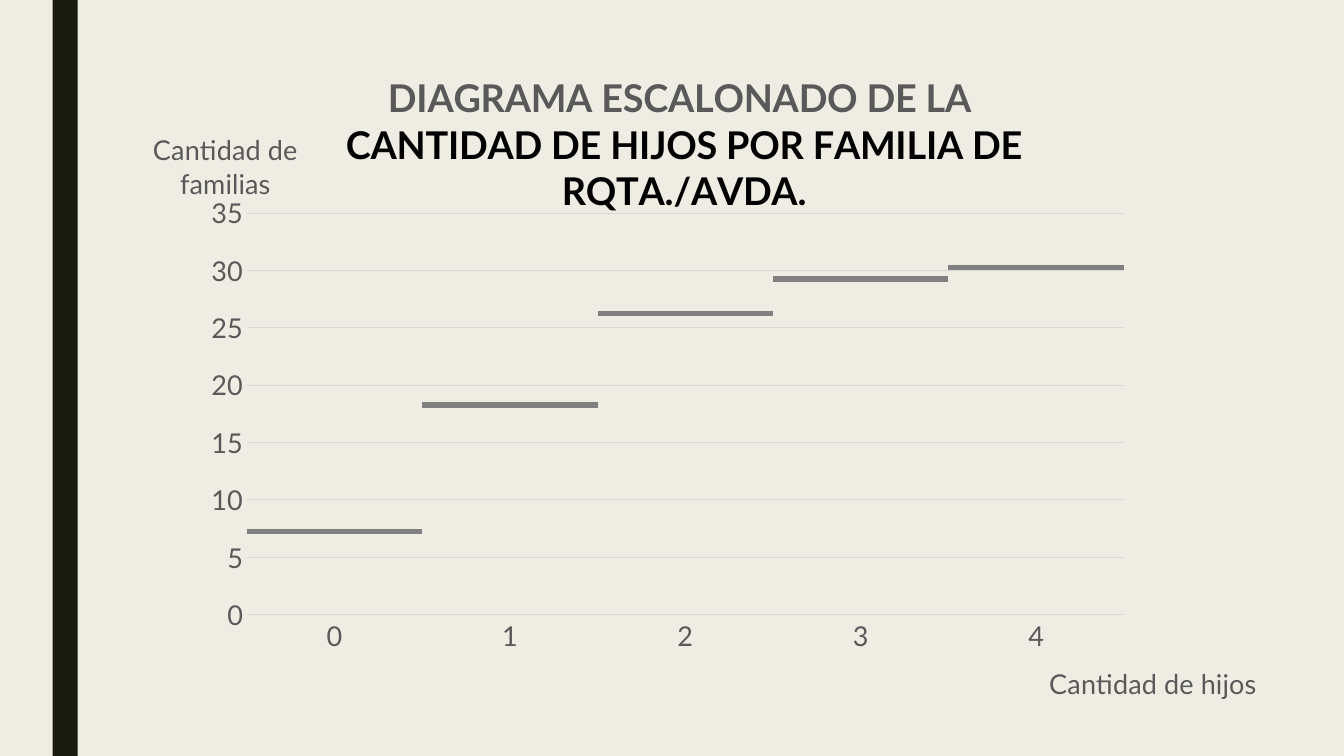
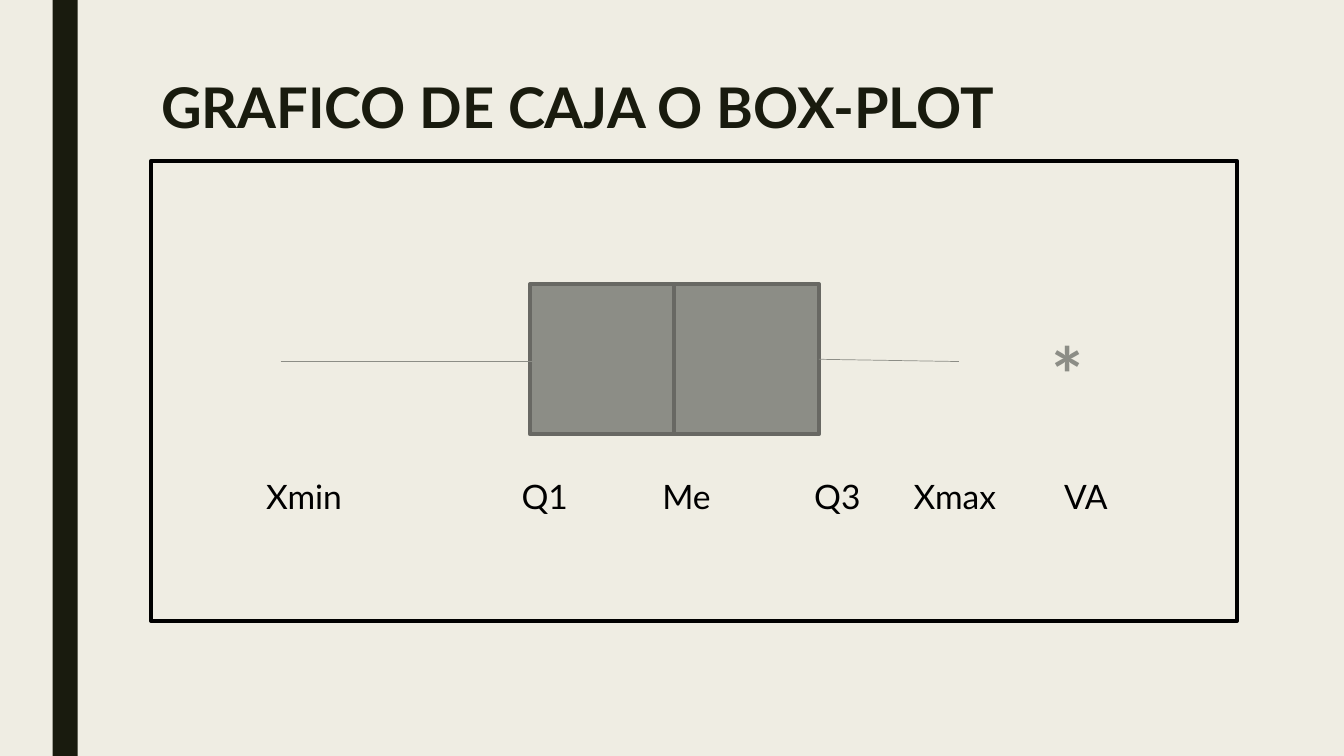
from dataclasses import dataclass

import lxml.etree
import pptx
import pptx.chart.data
import pptx.dml.color
import pptx.enum.chart
import pptx.enum.shapes
import pptx.enum.text
import pptx.oxml.ns
import pptx.util

Pt = pptx.util.Pt
qn = pptx.oxml.ns.qn


@dataclass(frozen=True)
class Theme:
    font: str = "Lato"
    background: str = "EFEDE3"
    dark: str = "191B0E"
    black: str = "000000"
    axis_text: str = "595959"
    grid: str = "D9D9D9"
    step: str = "808080"
    plot_box: str = "8C8D86"
    plot_edge: str = "686863"
    title_size: float = 40
    chart_title_size: float = 28
    axis_size: float = 20
    label_size: float = 24
    outlier_size: float = 54
    edge_width: float = 2.75
    whisker_width: float = 0.5
    grid_width: float = 0.75


THEME = Theme()
SLIDE_WIDTH, SLIDE_HEIGHT = 960, 540


def rgb(color):
    return pptx.dml.color.RGBColor.from_string(color)


def style_font(font, size, color, bold=False):
    font.name = THEME.font
    font.size = Pt(size)
    font.color.rgb = rgb(color)
    font.bold = bold


def style_line(line, color, width):
    line.color.rgb = rgb(color)
    line.width = Pt(width)


def add_box(shapes, box, fill=None, edge=None):
    rectangle = shapes.add_shape(
        pptx.enum.shapes.MSO_SHAPE.RECTANGLE, *map(Pt, box))
    rectangle.shadow.inherit = False
    if fill:
        rectangle.fill.solid()
        rectangle.fill.fore_color.rgb = rgb(fill)
    else:
        rectangle.fill.background()
    if edge:
        style_line(rectangle.line, edge, THEME.edge_width)
    else:
        rectangle.line.fill.background()
    return rectangle


def add_text(slide, box, text, size, color, bold=False):
    frame = slide.shapes.add_textbox(*map(Pt, box)).text_frame
    frame.word_wrap = True
    frame.vertical_anchor = pptx.enum.text.MSO_ANCHOR.TOP
    paragraph = frame.paragraphs[0]
    paragraph.text = text
    style_font(paragraph.font, size, color, bold)
    return paragraph


def add_whisker(slide, start, end):
    whisker = slide.shapes.add_connector(
        pptx.enum.shapes.MSO_CONNECTOR.STRAIGHT, *map(Pt, start + end))
    style_line(whisker.line, THEME.plot_box, THEME.whisker_width)
    lxml.etree.SubElement(whisker.element.spPr, qn("a:effectLst"))
    return whisker


def set_layout(parent, **percents):
    layout = parent.find(qn("c:layout"))
    if layout is None:
        layout = lxml.etree.Element(qn("c:layout"))
        parent.insert(1 if parent.find(qn("c:tx")) is not None else 0, layout)
    manual = lxml.etree.SubElement(layout, qn("c:manualLayout"))
    if "w" in percents:
        lxml.etree.SubElement(manual, qn("c:layoutTarget")).set("val", "inner")
    for side in ("x", "y"):
        lxml.etree.SubElement(manual, qn(f"c:{side}Mode")).set("val", "edge")
    for name, percent in percents.items():
        lxml.etree.SubElement(manual, qn(f"c:{name}")).set(
            "val", f"{percent / 100:.4f}")


def style_axis(axis, title, x, y):
    axis.major_tick_mark = pptx.enum.chart.XL_TICK_MARK.NONE
    axis.minor_tick_mark = pptx.enum.chart.XL_TICK_MARK.NONE
    style_font(axis.tick_labels.font, THEME.axis_size, THEME.axis_text)
    frame = axis.axis_title.text_frame
    frame.text = title
    style_font(frame.paragraphs[0].font, THEME.axis_size, THEME.axis_text)
    properties = frame._txBody.find(qn("a:bodyPr"))
    properties.set("rot", "0")
    properties.set("vert", "horz")
    set_layout(axis.axis_title.element, x=x, y=y)


def add_step_chart(slide, box):
    families = pptx.chart.data.CategoryChartData()
    families.categories = ["0", "1", "2", "3", "4"]
    families.add_series("Series 1", (7, 18, 26, 29, 30))
    families.add_series("Series 2", (0.5,) * 5)
    chart = slide.shapes.add_chart(
        pptx.enum.chart.XL_CHART_TYPE.COLUMN_STACKED,
        *map(Pt, box), families).chart
    chart.has_legend = False
    style_font(chart.font, THEME.axis_size, THEME.axis_text)

    chart.has_title = True
    heading = chart.chart_title.text_frame
    heading.text = ("DIAGRAMA ESCALONADO DE LA \n"
                    "CANTIDAD DE HIJOS POR FAMILIA DE RQTA./AVDA.")
    for paragraph, color in zip(heading.paragraphs,
                                (THEME.axis_text, THEME.black)):
        style_font(paragraph.font, THEME.chart_title_size, color, bold=True)
    set_layout(chart.chart_title.element, x=11.8, y=2.9)

    columns = chart.plots[0]
    columns.gap_width = 0
    columns.overlap = 100
    columns.vary_by_categories = False
    base, step = columns.series
    base.format.fill.background()
    base.format.line.fill.background()
    step.format.fill.solid()
    step.format.fill.fore_color.rgb = rgb(THEME.step)
    step.format.line.fill.background()

    children, counts = chart.category_axis, chart.value_axis
    style_axis(children, "Cantidad de hijos", x=83.5, y=94.6)
    style_axis(counts, "Cantidad de familias", x=0.1, y=11.4)
    style_line(children.format.line, THEME.grid, THEME.grid_width)
    counts.format.line.fill.background()
    counts.minimum_scale, counts.maximum_scale = 0, 35
    counts.major_unit = 5
    style_line(counts.major_gridlines.format.line, THEME.grid, THEME.grid_width)
    set_layout(chart.element.find(".//" + qn("c:plotArea")),
               x=9.3, y=25.2, w=81.6, h=62.6)


def add_box_plot(slide, box):
    left, top, _, _ = box
    half_width, half_height = 103.25, 107.25
    box_left, box_top = left + 270.5, top + 88.25
    middle = top + 143.5
    halves = slide.shapes.add_group_shape().shapes
    for index in range(2):
        upper_half = add_box(
            halves,
            (box_left + index * half_width, box_top, half_width, half_height),
            THEME.plot_box, THEME.plot_edge)
    add_box(slide.shapes, box, edge=THEME.black)

    box_right = box_left + 2 * half_width
    upper_whisker = add_whisker(
        slide, (box_right, box_top + half_height / 2), (left + 577, middle))
    upper_whisker.begin_connect(upper_half, 3)
    add_whisker(slide, (left + 92.5, middle), (left + 314, middle))
    add_text(slide, (left + 636.25, top + 116, 45, 73), "*",
             THEME.outlier_size, THEME.plot_box, bold=True)

    labels = add_text(slide, (left + 75, top + 221.5, 642, 36),
                      "Xmin\tQ1\tMe\tQ3\tXmax\tVA",
                      THEME.label_size, THEME.black)
    stops = lxml.etree.Element(qn("a:tabLst"))
    for position in (182.5, 283, 391.5, 462.5, 570):
        stop = lxml.etree.SubElement(stops, qn("a:tab"))
        stop.set("pos", str(int(Pt(position))))
        stop.set("algn", "l")
    labels._p.get_or_add_pPr().insert(0, stops)


def add_slide(deck):
    slide = deck.slides.add_slide(deck.slide_layouts[6])
    add_box(slide.shapes, (37.5, 0, 18, SLIDE_HEIGHT), THEME.dark)
    return slide


def step_slide(deck):
    add_step_chart(add_slide(deck), (105, 36.75, 796.25, 469.5))


def box_plot_slide(deck):
    slide = add_slide(deck)
    title = add_text(slide, (108, 54, 756, 60.5), "GRAFICO DE CAJA O BOX-PLOT",
                     THEME.title_size, THEME.dark, bold=True)
    title.line_spacing = 0.89
    add_box_plot(slide, (108, 114.75, 775.5, 329))


def main():
    deck = pptx.Presentation()
    deck.slide_width, deck.slide_height = Pt(SLIDE_WIDTH), Pt(SLIDE_HEIGHT)
    backdrop = deck.slide_master.background.fill
    backdrop.solid()
    backdrop.fore_color.rgb = rgb(THEME.background)
    step_slide(deck)
    box_plot_slide(deck)
    deck.save("out.pptx")


if __name__ == "__main__":
    main()
